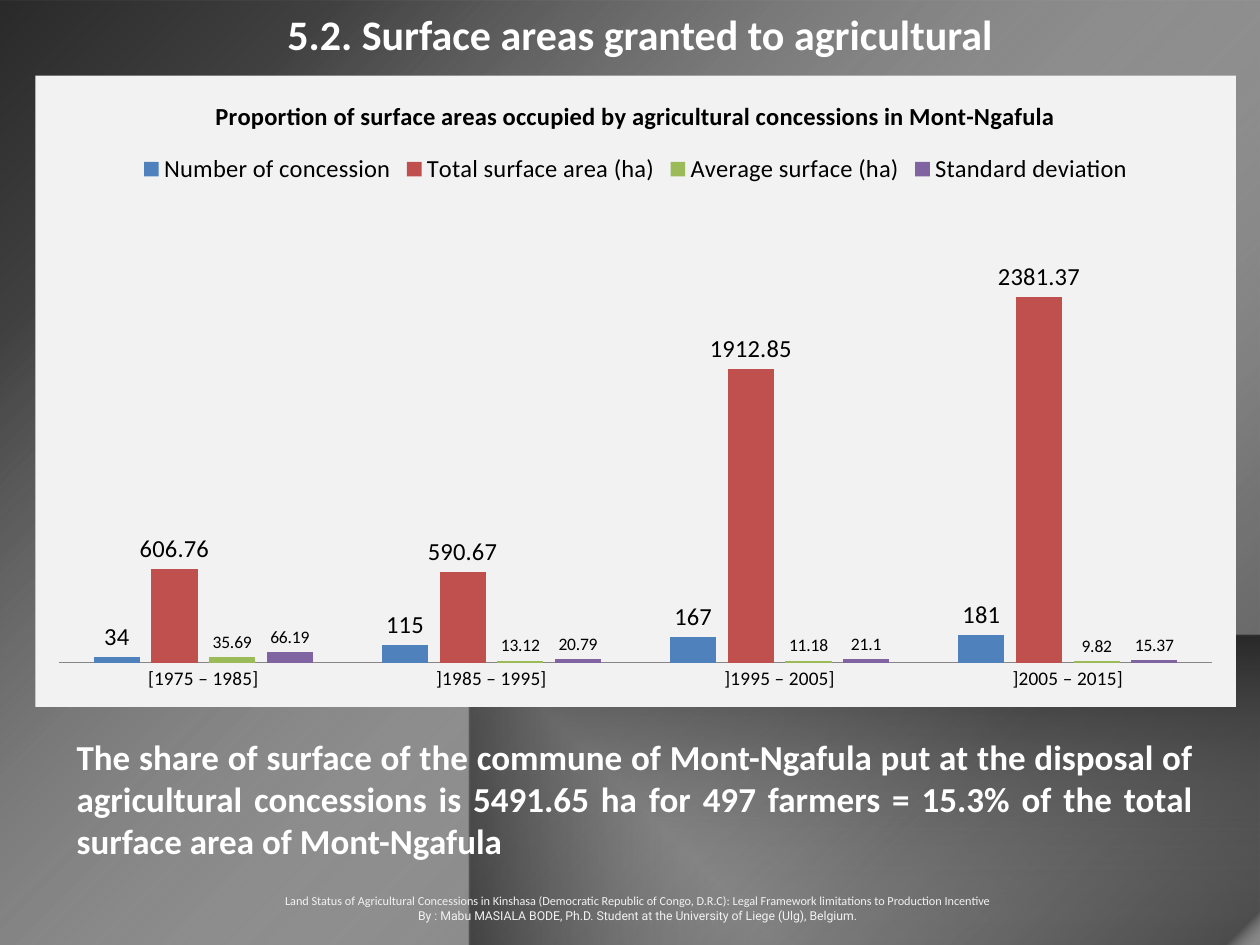
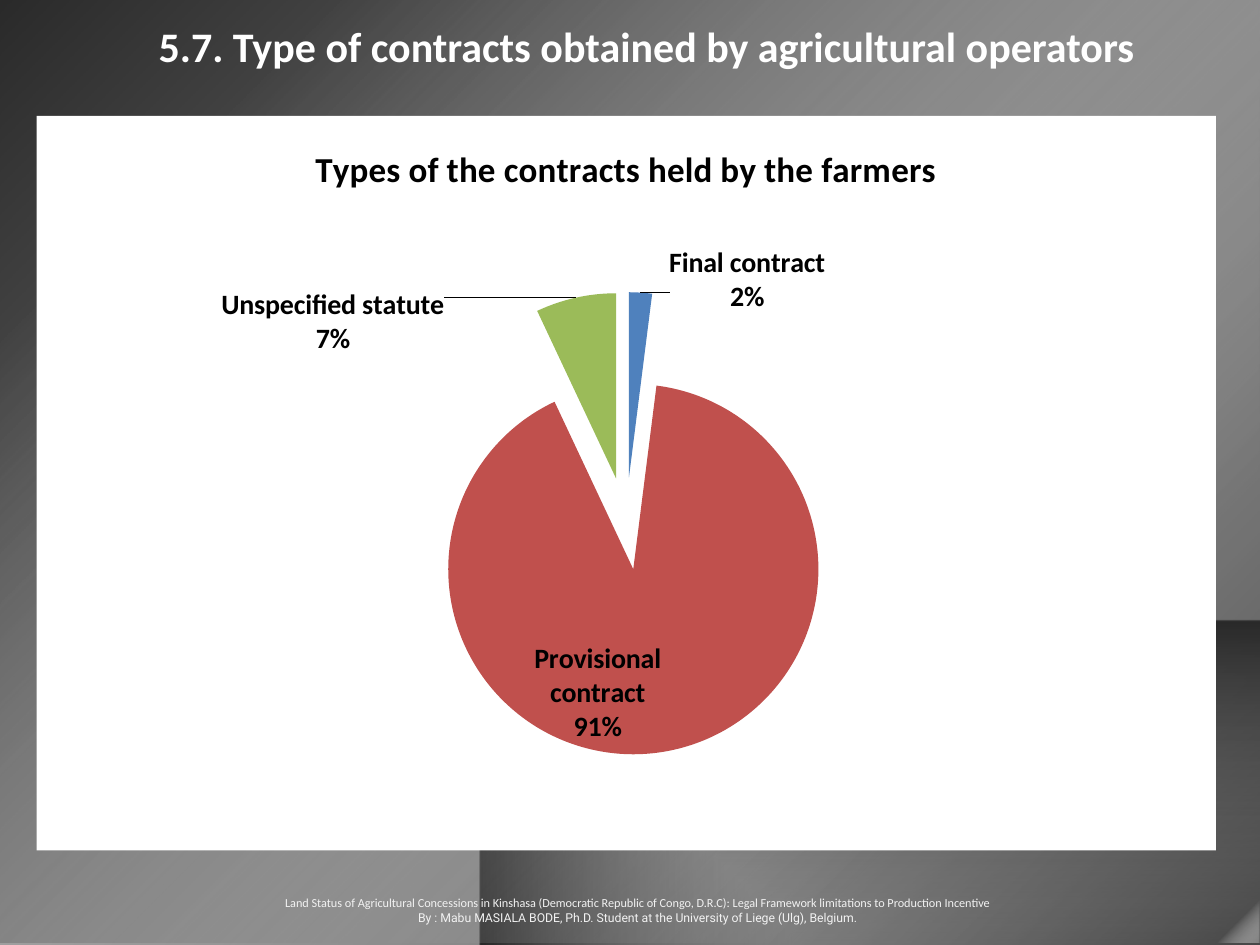
from dataclasses import dataclass

from pptx import Presentation
from pptx.chart.data import CategoryChartData
from pptx.dml.color import RGBColor
from pptx.enum.chart import XL_CHART_TYPE, XL_LABEL_POSITION, XL_LEGEND_POSITION, XL_TICK_MARK
from pptx.enum.shapes import MSO_SHAPE
from pptx.enum.text import MSO_AUTO_SIZE, PP_ALIGN
from pptx.oxml import parse_xml
from pptx.oxml.ns import nsdecls
from pptx.util import Inches, Pt

COLUMNS = XL_CHART_TYPE.COLUMN_CLUSTERED
PIE = XL_CHART_TYPE.PIE
OUTSIDE_END = XL_LABEL_POSITION.OUTSIDE_END
INSIDE_END = XL_LABEL_POSITION.INSIDE_END
LEGEND_TOP = XL_LEGEND_POSITION.TOP
NO_TICKS = XL_TICK_MARK.NONE
RECTANGLE = MSO_SHAPE.RECTANGLE
GROW = MSO_AUTO_SIZE.SHAPE_TO_FIT_TEXT
CENTER = PP_ALIGN.CENTER
JUSTIFY = PP_ALIGN.JUSTIFY
BLANK_LAYOUT = 6


@dataclass(frozen=True)
class Theme:
    font: str = "Calibri"
    byline_font: str = "Roboto"
    white: str = "FFFFFF"
    black: str = "000000"
    pale: str = "F2F2F2"
    axis: str = "868686"
    series: tuple = ("4F81BD", "C0504D", "9BBB59", "8064A2")
    title_size: int = 24
    body_size: int = 20
    footer_size: int = 7
    chart_size: int = 18
    category_size: int = 11
    column_title_size: int = 14
    column_label_sizes: tuple = (14, 14, 10, 10)
    pie_title_size: int = 20
    pie_label_size: int = 16


THEME = Theme()


def sheen_stops(dark_start):
    return [(0, "CBCBCB", 0), (0, "808080", 100), (2, "FFFFFF", 0),
            (21, "B2B2B2", 0), (dark_start, "404040", 100), (100, "292929", 100),
            (100, "777777", 100), (100, "EAEAEA", 100)]


def path_shade(kind):
    return (f'<a:path path="{kind}">'
            '<a:fillToRect l="100000" t="100000" r="0" b="0"/></a:path>')


# Stops are position, colour and opacity in percent, from back to front.
BACKDROP_GRADIENTS = [
    (sheen_stops(94), '<a:lin ang="2700000" scaled="0"/>'),
    ([(0, "E0E0E0", 0), (0, "808080", 100), (2, "FFFFFF", 0), (2, "B2B2B2", 0),
      (100, "292929", 100), (100, "737373", 57)], path_shade("rect")),
    (sheen_stops(85), path_shade("circle")),
]

FOOTER_LINES = [
    ("Land Status of Agricultural Concessions in Kinshasa (Democratic Republic of "
     "Congo, D.R.C): Legal Framework limitations to Production Incentive", THEME.font),
    ("By : Mabu MASIALA BODE, Ph.D. Student at the University of Liege (Ulg), Belgium.",
     THEME.byline_font),
]

PERIODS = ["[1975 – 1985]", "]1985 – 1995]", "]1995 – 2005]", "]2005 – 2015]"]
CONCESSIONS = {
    "Number of concession": (34, 115, 167, 181),
    "Total surface area (ha)": (606.76, 590.67, 1912.85, 2381.37),
    "Average surface (ha)": (35.69, 13.12, 11.18, 9.82),
    "Standard deviation": (66.19, 20.79, 21.1, 15.37),
}
CONTRACTS = ["Final contract", "Provisional contract", "Unspecified statute"]
CONTRACT_SHARES = {"Series 1": (2, 91, 7)}


def inches(box):
    return [Inches(length) for length in box]


def set_font(font, size, color=THEME.black, name=THEME.font, bold=False):
    for attribute, value in {"size": Pt(size), "name": name, "bold": bold}.items():
        setattr(font, attribute, value)
    font.color.rgb = RGBColor.from_string(color)


def paint(fill, color):
    fill.solid()
    fill.fore_color.rgb = RGBColor.from_string(color)


def add_gradient_layer(slide, box, stops, shade):
    shape = slide.shapes.add_shape(RECTANGLE, *inches(box))
    shape.line.fill.background()
    shape.shadow.inherit = False
    stop_xml = "".join(
        f'<a:gs pos="{position * 1000}"><a:srgbClr val="{color}">'
        f'<a:alpha val="{opacity * 1000}"/></a:srgbClr></a:gs>'
        for position, color, opacity in stops)
    gradient = parse_xml(f'<a:gradFill {nsdecls("a")} rotWithShape="1">'
                         f'<a:gsLst>{stop_xml}</a:gsLst>{shade}</a:gradFill>')
    shape.element.xpath(".//a:prstGeom")[0].addnext(gradient)


def add_text(slide, box, lines, size, color=THEME.white, bold=True, alignment=CENTER):
    """Add a text box with one paragraph for each (text, font name) pair."""
    frame = slide.shapes.add_textbox(*inches(box)).text_frame
    frame.word_wrap = True
    frame.auto_size = GROW
    for index, (text, font_name) in enumerate(lines):
        paragraph = frame.add_paragraph() if index else frame.paragraphs[0]
        paragraph.alignment = alignment
        run = paragraph.add_run()
        run.text = text
        set_font(run.font, size, color, font_name, bold)


def add_framed_slide(presentation, title, title_box, layer_boxes, footer_top):
    slide = presentation.slides.add_slide(presentation.slide_layouts[BLANK_LAYOUT])
    for box, (stops, shade) in zip(layer_boxes, BACKDROP_GRADIENTS):
        add_gradient_layer(slide, box, stops, shade)
    add_text(slide, (0.71, footer_top, 8.7, 0.34), FOOTER_LINES,
             THEME.footer_size, THEME.pale, bold=False)
    add_text(slide, title_box, [(title, THEME.font)], THEME.title_size)
    return slide


def manual_layout(target="", **fractions):
    values = "".join(f'<c:{key} val="{value}"/>' for key, value in fractions.items())
    return parse_xml(f'<c:layout {nsdecls("c")}><c:manualLayout>{target}{values}'
                     '</c:manualLayout></c:layout>')


def place_plot(chart, x, y, w, h):
    plot_area = chart.element.xpath(".//c:plotArea")[0]
    for layout in plot_area.xpath("c:layout"):
        plot_area.remove(layout)
    target = ('<c:layoutTarget val="inner"/><c:xMode val="edge"/>'
              '<c:yMode val="edge"/>')
    plot_area.insert(0, manual_layout(target, x=x, y=y, w=w, h=h))


def add_titled_chart(slide, kind, box, categories, series, title, title_size, background):
    data = CategoryChartData()
    data.categories = categories
    for name, values in series.items():
        data.add_series(name, values)
    chart = slide.shapes.add_chart(kind, *inches(box), data).chart
    set_font(chart.font, THEME.chart_size)
    chart.has_title = True
    frame = chart.chart_title.text_frame
    frame.text = title
    set_font(frame.paragraphs[0].runs[0].font, title_size, bold=True)
    chart.element.xpath("c:chart")[0].addnext(parse_xml(
        f'<c:spPr {nsdecls("c", "a")}><a:solidFill><a:srgbClr val="{background}"/>'
        '</a:solidFill><a:ln><a:noFill/></a:ln></c:spPr>'))
    return chart


def add_concession_chart(slide):
    chart = add_titled_chart(
        slide, COLUMNS, (0.28, 0.6, 9.53, 5.01), PERIODS, CONCESSIONS,
        "Proportion of surface areas occupied by agricultural concessions in Mont-Ngafula",
        THEME.column_title_size, THEME.pale)
    place_plot(chart, 0.02, 0.2, 0.96, 0.73)
    chart.has_legend = True
    chart.legend.position = LEGEND_TOP
    chart.legend.include_in_layout = False
    set_font(chart.legend.font, THEME.column_title_size)

    value_axis = chart.value_axis
    settings = {"minimum_scale": 0, "maximum_scale": 3000,
                "has_major_gridlines": False, "visible": False}
    for attribute, value in settings.items():
        setattr(value_axis, attribute, value)
    category_axis = chart.category_axis
    category_axis.major_tick_mark = NO_TICKS
    category_axis.format.line.color.rgb = RGBColor.from_string(THEME.axis)
    set_font(category_axis.tick_labels.font, THEME.category_size)

    plot = chart.plots[0]
    for attribute, value in {"gap_width": 150, "overlap": -25,
                             "vary_by_categories": False}.items():
        setattr(plot, attribute, value)
    for series, color, size in zip(plot.series, THEME.series, THEME.column_label_sizes):
        paint(series.format.fill, color)
        series.data_labels.show_value = True
        series.data_labels.position = OUTSIDE_END
        set_font(series.data_labels.font, size)


def show_name_and_percent(chart):
    """Make every label show its category above its share."""
    for tag, value in {"showVal": "0", "showCatName": "1", "showPercent": "1"}.items():
        for flag in chart.element.xpath(f".//c:{tag}"):
            flag.set("val", value)
    for flag in chart.element.xpath(".//c:showBubbleSize"):
        flag.addnext(parse_xml(f'<c:separator {nsdecls("c")}>\n</c:separator>'))


def add_contract_chart(slide):
    chart = add_titled_chart(
        slide, PIE, (0.29, 0.92, 9.36, 5.83), CONTRACTS, CONTRACT_SHARES,
        "Types of the contracts held by the farmers", THEME.pie_title_size, THEME.white)
    place_plot(chart, 0.3, 0.24, 0.4, 0.63)
    chart.has_legend = False
    plot = chart.plots[0]
    plot.vary_by_categories = True
    series = plot.series[0]
    for index in range(len(CONTRACTS)):
        paint(series.points[index].format.fill, THEME.series[index])
    chart.element.xpath(".//c:dPt")[0].addprevious(
        parse_xml(f'<c:explosion {nsdecls("c")} val="25"/>'))

    labels = series.data_labels
    labels.position = INSIDE_END
    set_font(labels.font, THEME.pie_label_size, bold=True)
    for index, (x, y) in {0: (0.09, 0.04), 2: (-0.11, 0.09)}.items():
        label = series.points[index].data_label
        label.position = OUTSIDE_END
        set_font(label.font, THEME.pie_label_size, bold=True)
        label_index = chart.element.xpath(f'.//c:dLbl/c:idx[@val="{index}"]')[0]
        label_index.addnext(manual_layout(x=x, y=y))
    show_name_and_percent(chart)


def add_surface_slide(presentation):
    layers = [(-0.04, 0, 10.04, 7.5), (-0.04, 0, 10.07, 7.53), (-0.04, 0, 10.08, 7.53)]
    slide = add_framed_slide(presentation, "5.2. Surface areas granted to agricultural",
                             (0.73, 0.02, 8.7, 0.5), layers, 7.04)
    add_concession_chart(slide)
    summary = ("The share of surface of the commune of Mont-Ngafula put at the disposal "
               "of agricultural concessions is 5491.65 ha for 497 farmers = 15.3% of the "
               "total surface area of Mont-Ngafula")
    add_text(slide, (0.51, 5.79, 9.06, 1.11), [(summary, THEME.font)],
             THEME.body_size, alignment=JUSTIFY)


def add_contract_slide(presentation):
    layers = [(-0.04, -0.11, 10.04, 7.63), (-0.01, -0.11, 10.07, 7.64),
              (-0.04, -0.05, 10.04, 7.53)]
    slide = add_framed_slide(
        presentation, "5.7. Type of contracts obtained by agricultural operators ",
        (0.29, 0.11, 9.76, 0.5), layers, 7.06)
    add_contract_chart(slide)


def main():
    presentation = Presentation()
    presentation.slide_width = Inches(10)
    presentation.slide_height = Inches(7.5)
    add_surface_slide(presentation)
    add_contract_slide(presentation)
    presentation.save("out.pptx")


if __name__ == "__main__":
    main()
